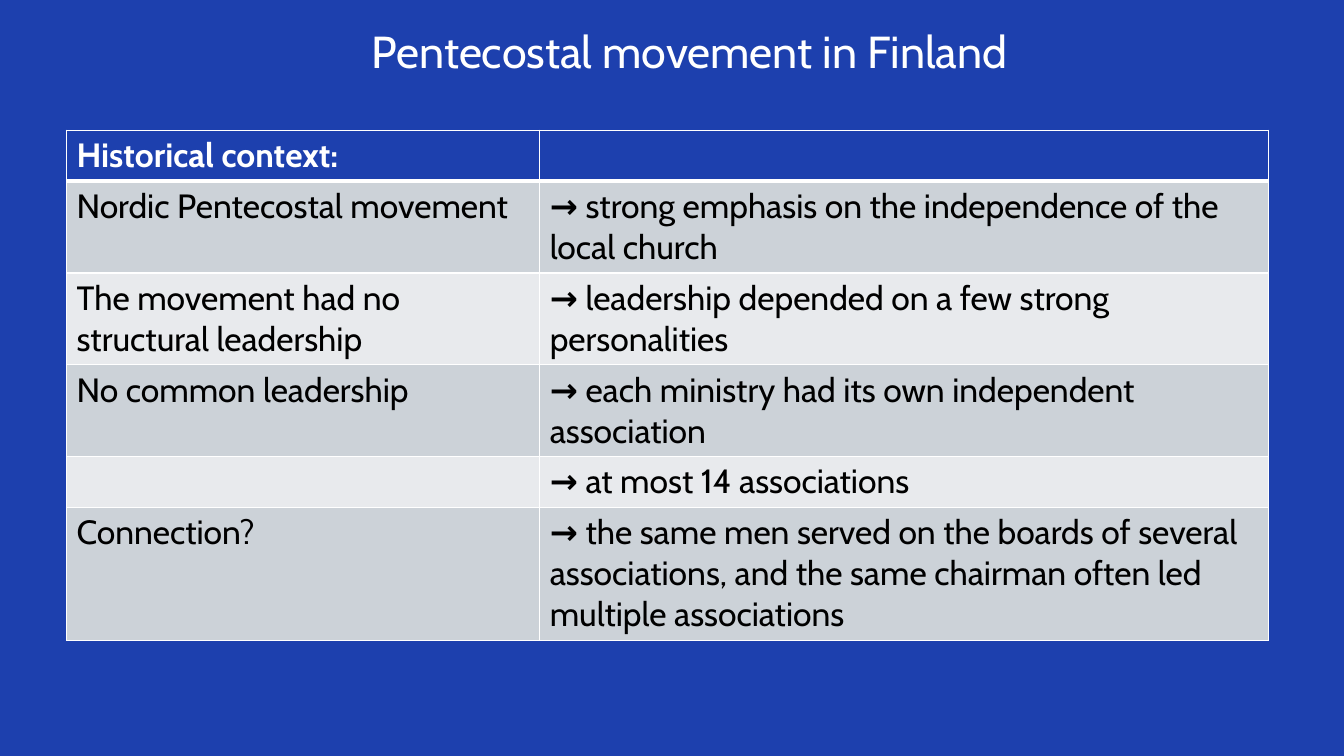
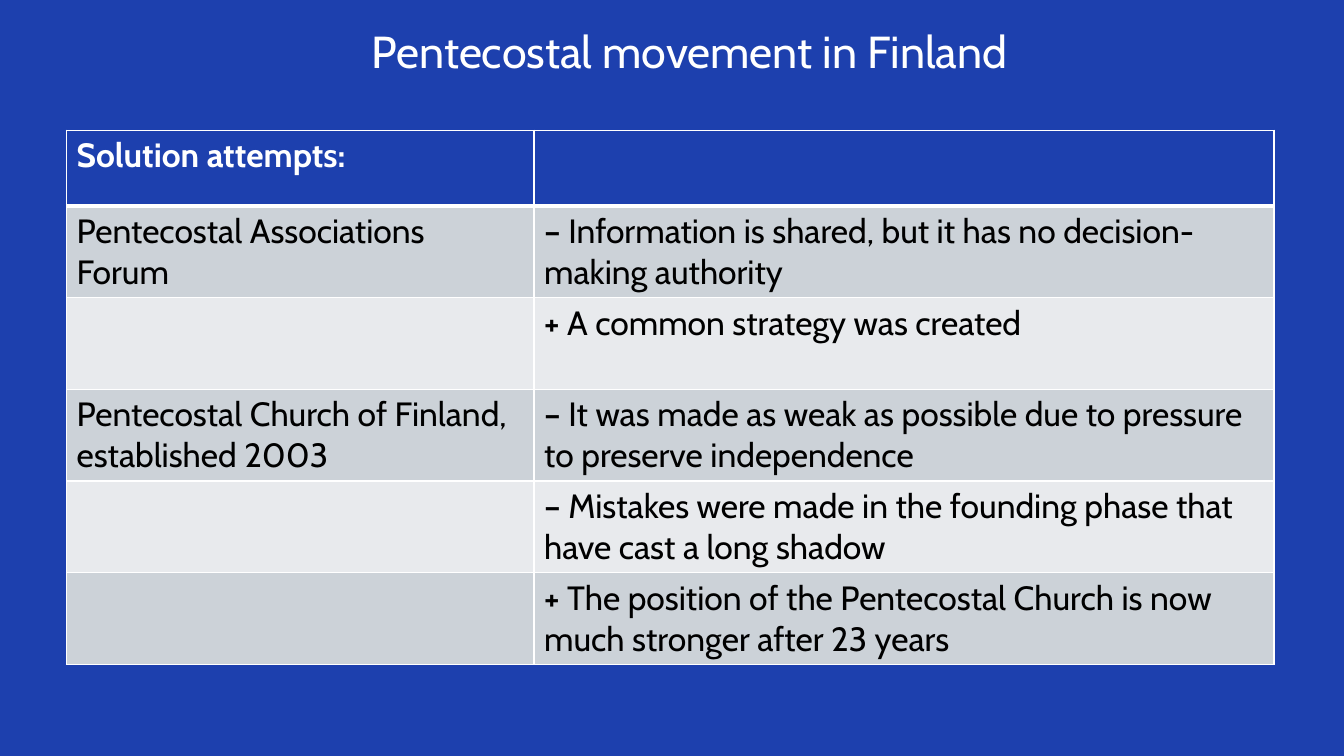
import pptx
import pptx.util
import pptx.dml.color
import pptx.enum.text
import lxml.etree
from pptx.oxml.ns import qn

Pt = pptx.util.Pt
FONT = "Cabin"
COLORS = {
    "blue": "1D40AE",
    "white": "FFFFFF",
    "black": "000000",
    "dark band": "CCD2D8",
    "light band": "E8EAED",
}
TITLE = "Pentecostal movement in Finland"

# Each table row holds the left text, the bold marker and the right text
TABLES = [
    {
        "columns": [338, 520.5],
        "heights": [36, 64.6, 64.6, 64.6, 36, 94],
        "rows": [
            ("Historical context:", "", ""),
            ("Nordic Pentecostal movement", "→ ",
             "strong emphasis on the independence of the local church"),
            ("The movement had no structural leadership", "→ ",
             "leadership depended on a few strong personalities"),
            ("No common leadership", "→ ",
             "each ministry had its own independent association"),
            ("", "→ ", "at most 14 associations"),
            ("Connection?", "→ ",
             "the same men served on the boards of several associations, "
             "and the same chairman often led multiple associations"),
        ],
    },
    {
        "columns": [334, 528.5],
        "heights": [54] + [65.4] * 5,
        "rows": [
            ("Solution attempts:", "", ""),
            ("Pentecostal Associations Forum", "– ",
             "Information is shared, but it has no decision-making authority"),
            ("", "+ ", "A common strategy was created"),
            ("Pentecostal Church of Finland, established 2003", "– ",
             "It was made as weak as possible due to pressure to preserve independence"),
            ("", "– ",
             "Mistakes were made in the founding phase that have cast a long shadow"),
            ("", "+ ",
             "The position of the Pentecostal Church is now much stronger after 23 years"),
        ],
    },
]


def add_run(paragraph, text, size, color, bold=False):
    run = paragraph.add_run()
    run.text = text
    run.font.name = FONT
    run.font.size = Pt(size)
    run.font.bold = bold
    run.font.color.rgb = pptx.dml.color.RGBColor.from_string(COLORS[color])


def add_borders(cell, widths):
    properties = cell._tc.get_or_add_tcPr()
    for side, width in widths.items():
        line = lxml.etree.SubElement(properties, qn("a:ln" + side), w=str(Pt(width)))
        fill = lxml.etree.SubElement(line, qn("a:solidFill"))
        lxml.etree.SubElement(fill, qn("a:srgbClr"), val=COLORS["white"])


presentation = pptx.Presentation()
presentation.slide_width = Pt(960)
presentation.slide_height = Pt(540)

# Shared background and title place
background = presentation.slide_master.background.fill
background.solid()
background.fore_color.rgb = pptx.dml.color.RGBColor.from_string(COLORS["blue"])
layout = presentation.slide_layouts.get_by_name("Title Only")
title_place = layout.placeholders[0]
title_place.left, title_place.top = Pt(218), Pt(13)
title_place.width, title_place.height = Pt(549), Pt(46)

for content in TABLES:
    slide = presentation.slides.add_slide(layout)

    # Title
    title_frame = slide.shapes.title.text_frame
    title_frame.vertical_anchor = pptx.enum.text.MSO_ANCHOR.MIDDLE
    title_frame.paragraphs[0].alignment = pptx.enum.text.PP_ALIGN.CENTER
    add_run(title_frame.paragraphs[0], TITLE, 32, "white")

    # Table grid
    columns, heights = content["columns"], content["heights"]
    shape = slide.shapes.add_table(len(heights), len(columns), Pt(47.5), Pt(93),
                                   Pt(sum(columns)), Pt(sum(heights)))
    table = shape.table
    table.horz_banding = False
    for column, width in zip(table.columns, columns):
        column.width = Pt(width)
    for row, height in zip(table.rows, heights):
        row.height = Pt(height)

    # Cells: a header with a thick rule below, then alternating bands
    for index, (left, marker, right) in enumerate(content["rows"]):
        header = index == 0
        text_color = "white" if header else "black"
        band = "blue" if header else "dark band" if index % 2 else "light band"
        borders = {"L": 1, "R": 1, "T": 3 if index == 1 else 1, "B": 3 if header else 1}
        parts = [[(left, header)], [(marker, True), (right, False)]]
        for cell, runs in zip(table.rows[index].cells, parts):
            add_borders(cell, borders)
            cell.fill.solid()
            cell.fill.fore_color.rgb = pptx.dml.color.RGBColor.from_string(COLORS[band])
            for text, bold in runs:
                if text:
                    add_run(cell.text_frame.paragraphs[0], text, 24, text_color, bold)

presentation.save("out.pptx")
